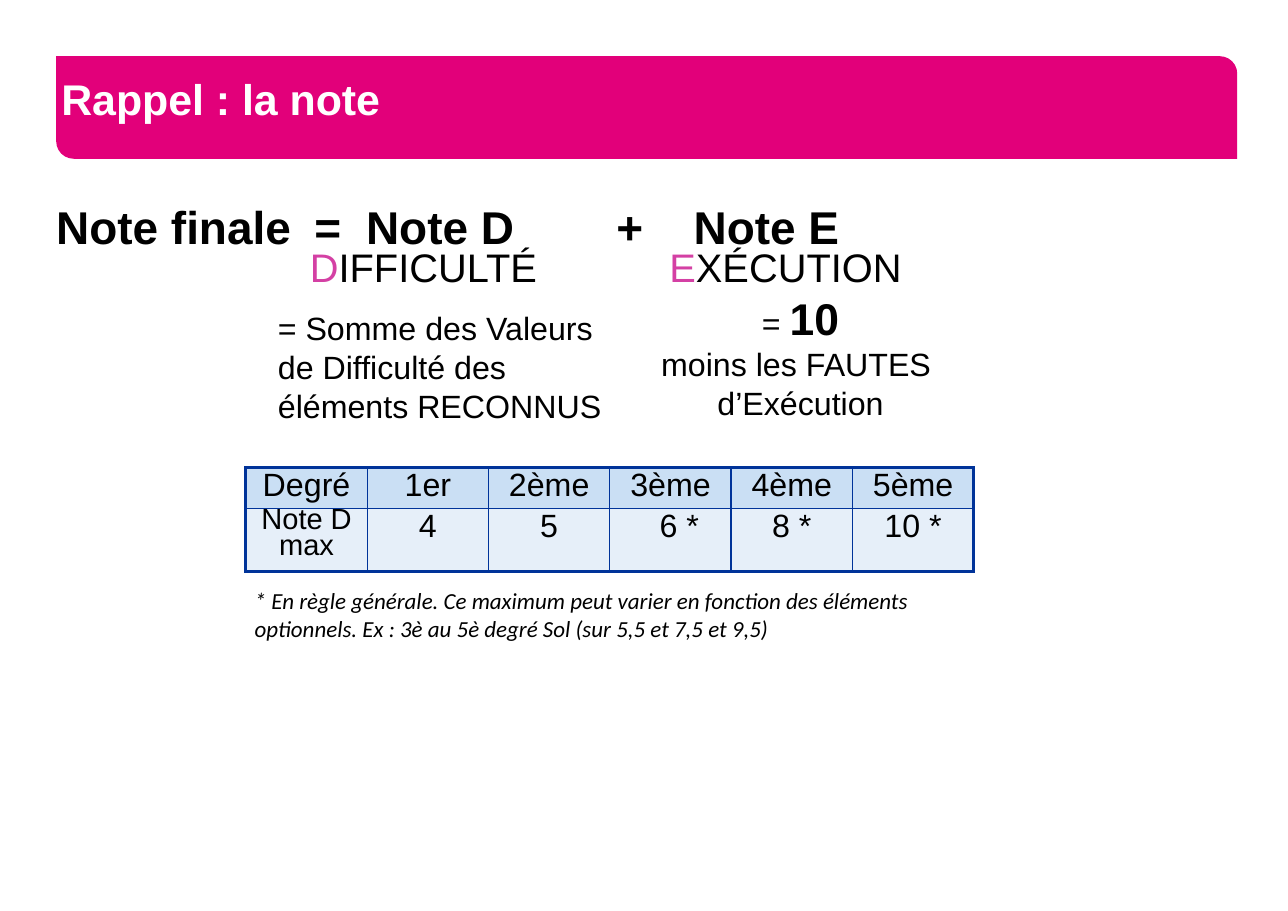
from pptx import Presentation
from pptx.dml.color import RGBColor
from pptx.enum.shapes import MSO_SHAPE
from pptx.enum.text import MSO_ANCHOR, PP_ALIGN
from pptx.oxml.ns import qn
from pptx.util import Inches, Pt
from lxml import etree

BANNER = MSO_SHAPE.ROUND_2_DIAG_RECTANGLE
MIDDLE, TOP = MSO_ANCHOR.MIDDLE, MSO_ANCHOR.TOP
LEFT, CENTER = PP_ALIGN.LEFT, PP_ALIGN.CENTER

COLORS = {
    "pink": "E2007A",
    "letter": "D440A4",
    "white": "FFFFFF",
    "black": "000000",
    "border": "003399",
    "head": "CADFF4",
    "body": "E6EFF9",
}

GRADES = [
    ["Degré", "1er", "2ème", "3ème", "4ème", "5ème"],
    ["Note D max", "4", "5", "6 *", "8 *", "10 *"],
]


def rgb(name):
    return RGBColor.from_string(COLORS[name])


def add_run(para, text, size, color="black", bold=False, italic=False, face="Arial"):
    run = para.add_run()
    run.text = text
    font = run.font
    font.name, font.size = face, Pt(size)
    font.bold, font.italic = bold, italic
    font.color.rgb = rgb(color)


def set_frame(frame, inset, wrap=True, anchor=TOP):
    frame.word_wrap = wrap
    frame.vertical_anchor = anchor
    frame.margin_left = frame.margin_right = Inches(inset)
    frame.margin_top = frame.margin_bottom = Inches(inset)


def add_tabs(para, stops):
    tabs = etree.SubElement(para._p.get_or_add_pPr(), qn("a:tabLst"))
    for stop in stops:
        etree.SubElement(tabs, qn("a:tab"), pos=str(Inches(stop)), algn="l")


def add_text(slide, box, lines, inset=0.05, wrap=True, align=LEFT, pitch=None, tabs=None):
    """Each line is a list of runs; tabs holds the stops of each line."""
    frame = slide.shapes.add_textbox(*map(Inches, box)).text_frame
    set_frame(frame, inset, wrap)
    for i, runs in enumerate(lines):
        para = frame.add_paragraph() if i else frame.paragraphs[0]
        para.alignment = align
        if tabs:
            add_tabs(para, tabs[i])
        if pitch:
            para.line_spacing = Pt(pitch)
        for run in runs:
            add_run(para, *run)


def add_banner(slide, box, title):
    shape = slide.shapes.add_shape(BANNER, *map(Inches, box))
    shape.shadow.inherit = False
    shape.adjustments[0], shape.adjustments[1] = 0, 0.17
    shape.fill.solid()
    shape.fill.fore_color.rgb = rgb("pink")
    shape.line.fill.background()
    set_frame(shape.text_frame, 0, anchor=MIDDLE)
    para = shape.text_frame.paragraphs[0]
    para.alignment = LEFT
    para.line_spacing = Pt(22)
    add_run(para, title, 28, "white", True)


def set_edge(cell, side, width):
    line = etree.Element(qn("a:" + side), w=str(Pt(width)))
    fill = etree.SubElement(line, qn("a:solidFill"))
    etree.SubElement(fill, qn("a:srgbClr"), val=COLORS["border"])
    return line


def add_edges(cell, outer):
    props = cell._tc.get_or_add_tcPr()
    for i, side in enumerate(("lnL", "lnR", "lnT", "lnB")):
        props.insert(i, set_edge(cell, side, 2.25 if outer[side] else 1))


def add_grades(slide, left, top, width, heights):
    rows, cols = len(GRADES), len(GRADES[0])
    frame = slide.shapes.add_table(rows, cols, Inches(left), Inches(top),
                                   Inches(width * cols), Inches(sum(heights)))
    table = frame.table
    table.horz_banding = False
    for r, row in enumerate(GRADES):
        table.rows[r].height = Inches(heights[r])
        for c, text in enumerate(row):
            cell = table.cell(r, c)
            cell.margin_left = cell.margin_right = 0
            cell.margin_top = cell.margin_bottom = 0
            cell.fill.solid()
            cell.fill.fore_color.rgb = rgb("body" if r else "head")
            add_edges(cell, {"lnL": c == 0, "lnR": c == cols - 1,
                             "lnT": r == 0, "lnB": r == rows - 1})
            para = cell.text_frame.paragraphs[0]
            para.alignment = CENTER
            label = r > 0 and c == 0
            if label:
                para.line_spacing = 0.8
            add_run(para, text, 19 if label else 21)
    # The first starred value sits a little to the right
    table.cell(1, 3).margin_left = Inches(0.16)


def main():
    deck = Presentation()
    deck.slide_width, deck.slide_height = Inches(11.68), Inches(8.26)
    slide = deck.slides.add_slide(deck.slide_layouts[6])

    # Title
    add_banner(slide, (0.51, 0.51, 10.71, 0.93), "Rappel : la note")

    # Formula and the words behind its letters
    add_text(slide, (0.51, 1.97, 10.71, 0.8), [
        [("Note finale\t=\tNote D\t+\tNote E", 30, "black", True)],
        [("\t", 26), ("D", 26, "letter"), ("IFFICULTÉ\t", 26),
         ("E", 26, "letter"), ("XÉCUTION", 26)],
    ], inset=0, pitch=24, tabs=[(2.34, 2.81, 5.08, 5.78), (2.3, 5.56)])

    # Explanations
    add_text(slide, (2.47, 2.75, 3.05, 1.09), [
        [("= Somme des Valeurs", 21)],
        [("de Difficulté des", 21)],
        [("éléments RECONNUS", 21)],
    ], wrap=False)
    add_text(slide, (5.94, 2.59, 2.64, 1.55), [
        [("= ", 21), ("10", 29, "black", True)],
        [("moins les FAUTES ", 21)],
        [("d’Exécution", 21)],
    ], wrap=False, align=CENTER)

    # Maximum by grade, with its footnote
    add_grades(slide, 2.23, 4.24, 1.1, (0.37, 0.57))
    note = ("* En règle générale. Ce maximum peut varier en fonction des éléments "
            "optionnels. Ex : 3è au 5è degré Sol (sur 5,5 et 7,5 et 9,5)")
    add_text(slide, (2.26, 5.27, 6.77, 0.55),
             [[(note, 15, "black", False, True, "Calibri")]])

    deck.save("out.pptx")


if __name__ == "__main__":
    main()
